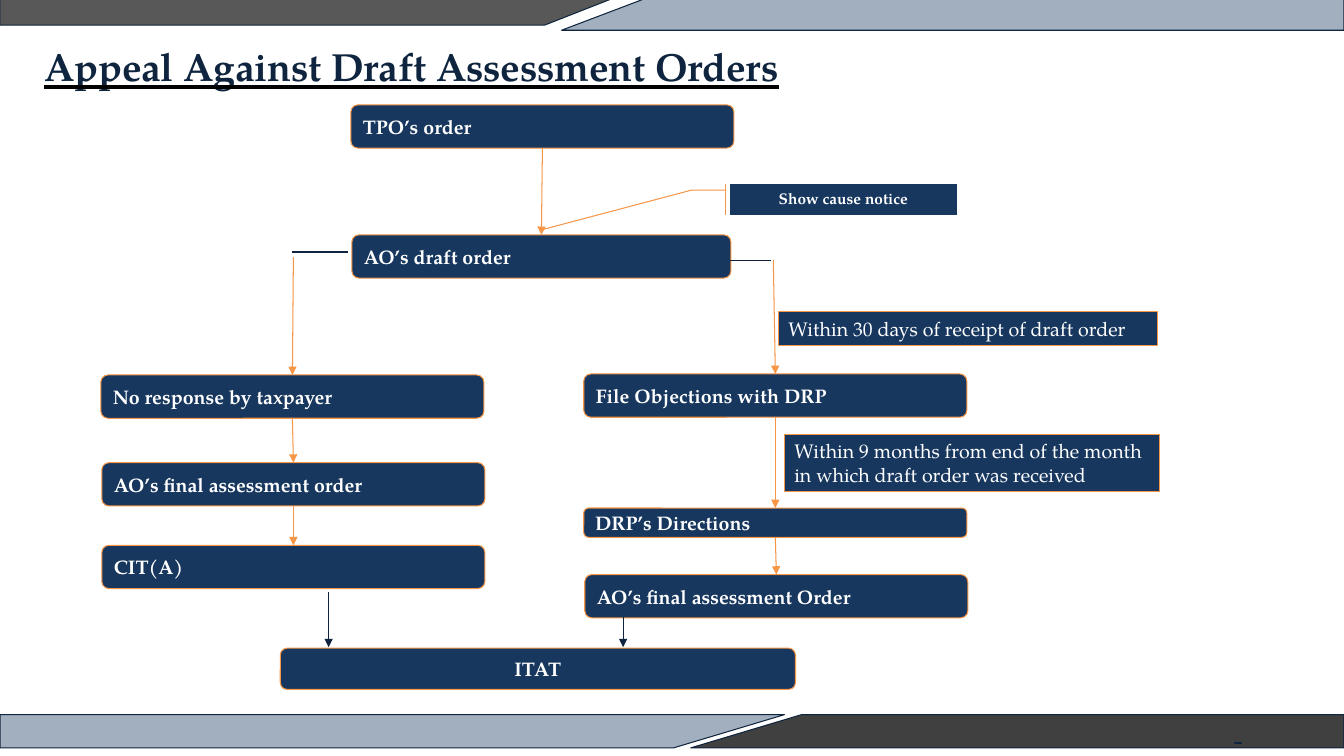
from lxml import etree
from pptx import Presentation
from pptx.dml.color import RGBColor
from pptx.enum import shapes, text
from pptx.oxml import ns
from pptx.util import Inches, Pt

NAVY = RGBColor(0x17, 0x37, 0x5E)
INK = RGBColor(0x0F, 0x24, 0x3E)
ORANGE = RGBColor(0xF7, 0x96, 0x46)
WHITE = RGBColor(0xFF, 0xFF, 0xFF)
GREY = RGBColor(0x58, 0x58, 0x58)
CHARCOAL = RGBColor(0x40, 0x40, 0x40)
FONT = "TeX Gyre Pagella"
TOP, BOTTOM = 0, 2
STEP_W, STEP_H = 3.8, 0.43

TITLE = "Appeal Against Draft Assessment Orders"

BANDS = [
    ([(6.47, -0.17), (0, -0.17), (0, 0.25), (5.4, 0.25)], GREY, 100),
    ([(13.33, -0.11), (6.65, -0.11), (5.57, 0.3), (13.33, 0.3)], NAVY, 40),
    ([(13.33, 7.09), (7.95, 7.09), (6.85, 7.42), (13.33, 7.42)], CHARCOAL, 100),
    ([(7.78, 7.09), (0, 7.09), (0, 7.42), (6.68, 7.42)], NAVY, 40),
    ([(12.24, 7.37), (12.31, 7.37), (12.31, 7.38), (12.24, 7.38)], WHITE, 80),
]

STEPS = {
    "tpo": ("TPO’s order", 3.48, 1.04, STEP_W, STEP_H),
    "draft": ("AO’s draft order", 3.49, 2.33, 3.76, STEP_H),
    "no response": ("No response by taxpayer", 1, 3.72, STEP_W, STEP_H),
    "final left": ("AO’s final assessment order", 1.01, 4.59, STEP_W, STEP_H),
    "cit": ("CIT(A)", 1.01, 5.41, STEP_W, STEP_H),
    "objections": ("File Objections with DRP", 5.79, 3.71, STEP_W, STEP_H),
    "directions": ("DRP’s Directions", 5.79, 5.04, STEP_W, 0.29),
    "final right": ("AO’s final assessment Order", 5.8, 5.7, STEP_W, STEP_H),
    "itat": ("ITAT", 2.78, 6.43, 5.11, 0.41),
}

DEADLINES = [
    ("Within 30 days of receipt of draft order", 7.72, 3.09, 3.76, 0.34),
    ("Within 9 months from end of the month in which draft order was received",
     7.78, 4.31, 3.72, 0.57),
]

NOTICE = ("Show cause notice", 7.24, 1.83, 2.25, 0.3)
NOTICE_LEADER = [0.19, -0.02, 0.19, -0.17, 1.5, -0.83]

FLOWS = [
    ("tpo", "draft"),
    ("no response", "final left"),
    ("final left", "cit"),
    ("objections", "directions"),
    ("directions", "final right"),
]
BRANCHES = [((2.91, 2.55), "no response"), ((7.67, 2.58), "objections")]
STUBS = [((2.9, 2.5), (3.45, 2.5)), ((7.24, 2.58), (7.65, 2.58))]
APPEALS = [((3.26, 5.87), (3.26, 6.42)), ((6.18, 6.12), (6.18, 6.42))]

deck = Presentation()
deck.slide_width, deck.slide_height = Inches(13.33), Inches(7.5)
slide = deck.slides.add_slide(deck.slide_layouts[6])


def paint(shape, fill, line):
    shape.shadow.inherit = False
    shape.fill.solid()
    shape.fill.fore_color.rgb = fill
    shape.line.color.rgb = line
    shape.line.width = Pt(0.75)


def style(paragraph, size, color, bold):
    font = paragraph.font
    font.name, font.size, font.bold = FONT, Pt(size), bold
    font.color.rgb = color


def add_band(points, fill, opacity):
    corners = [(Inches(x), Inches(y)) for x, y in points]
    outline = slide.shapes.build_freeform(*corners[0], scale=1.0)
    outline.add_line_segments(corners[1:], close=True)
    band = outline.convert_to_shape()
    paint(band, fill, INK)
    if opacity < 100:
        color = band.fill._xPr.find(".//" + ns.qn("a:srgbClr"))
        etree.SubElement(color, ns.qn("a:alpha"), val=str(opacity * 1000))


def add_box(preset, label, x, y, w, h, size=14, bold=True, centred=False,
            anchor=text.MSO_ANCHOR.MIDDLE):
    box = slide.shapes.add_shape(preset, *map(Inches, (x, y, w, h)))
    paint(box, NAVY, ORANGE)
    frame = box.text_frame
    frame.text = label
    frame.word_wrap = True
    frame.vertical_anchor = anchor
    paragraph = frame.paragraphs[0]
    paragraph.alignment = text.PP_ALIGN.CENTER if centred else text.PP_ALIGN.LEFT
    style(paragraph, size, WHITE, bold)
    return box


def add_line(start=(0, 0), end=(0, 0), color=ORANGE, arrow=True):
    line = slide.shapes.add_connector(
        shapes.MSO_CONNECTOR.STRAIGHT, *map(Inches, (*start, *end)))
    line.line.color.rgb = color
    line.line.width = Pt(0.75)
    if arrow:
        etree.SubElement(line.line._get_or_add_ln(), ns.qn("a:tailEnd"), type="triangle")
    etree.SubElement(line._element.spPr, ns.qn("a:effectLst"))
    return line


for band in BANDS:
    add_band(*band)

boxes = {
    key: add_box(shapes.MSO_SHAPE.ROUNDED_RECTANGLE, *step, centred=key == "itat")
    for key, step in STEPS.items()
}

for deadline in DEADLINES:
    add_box(shapes.MSO_SHAPE.RECTANGLE, *deadline, bold=False,
            anchor=text.MSO_ANCHOR.TOP)

notice = add_box(shapes.MSO_SHAPE.LINE_CALLOUT_2_ACCENT_BAR, *NOTICE, size=11,
                 centred=True, anchor=text.MSO_ANCHOR.TOP)
for index, value in enumerate(NOTICE_LEADER):
    notice.adjustments[index] = value

for source, target in FLOWS:
    flow = add_line()
    flow.begin_connect(boxes[source], BOTTOM)
    flow.end_connect(boxes[target], TOP)

for start, target in BRANCHES:
    add_line(start, start).end_connect(boxes[target], TOP)

for start, end in STUBS:
    add_line(start, end, INK, arrow=False)

for start, end in APPEALS:
    add_line(start, end, INK)

title = slide.shapes.add_textbox(*map(Inches, (0.44, 0.42, 12.46, 0.55))).text_frame
title.word_wrap = True
title.margin_left = title.margin_top = title.margin_right = title.margin_bottom = 0
heading = title.paragraphs[0]
heading.space_before = Pt(1.1)
style(heading, 28, INK, True)
heading_run = heading.add_run()
heading_run.text = TITLE
heading_run.font.underline = text.MSO_UNDERLINE.HEAVY_LINE
heading_props = heading_run._r.get_or_add_rPr()
heading_props.set("spc", "-10")
underline = etree.SubElement(heading_props, ns.qn("a:uFill"))
underline_fill = etree.SubElement(underline, ns.qn("a:solidFill"))
etree.SubElement(underline_fill, ns.qn("a:srgbClr"), val="000000")

deck.save("out.pptx")
